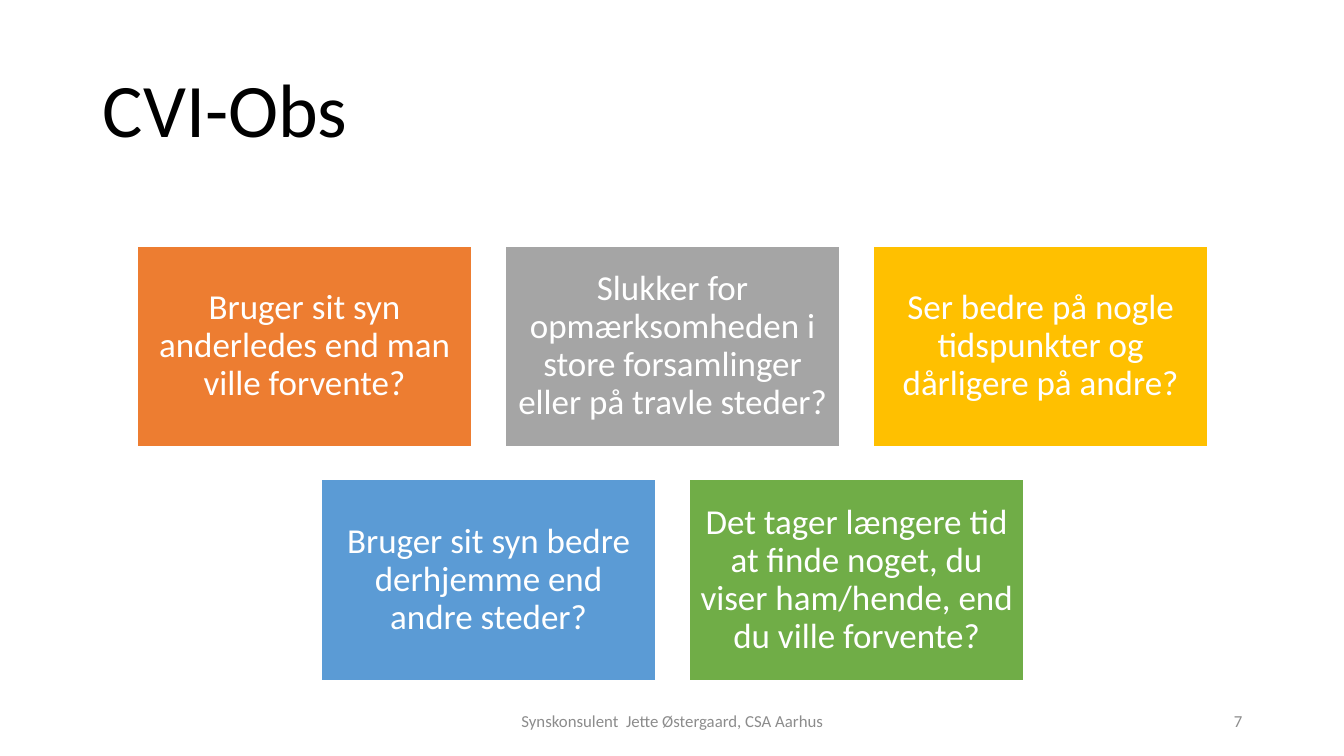
from pptx import Presentation
from pptx.dml.color import RGBColor
from pptx.enum import shapes, text
from pptx.util import Inches, Pt

WHITE = RGBColor(0xFF, 0xFF, 0xFF)
BLACK = RGBColor(0x00, 0x00, 0x00)
GREY_TEXT = RGBColor(0x8C, 0x8C, 0x8C)
ORANGE = RGBColor(0xED, 0x7D, 0x31)
GREY = RGBColor(0xA5, 0xA5, 0xA5)
YELLOW = RGBColor(0xFF, 0xC0, 0x00)
BLUE = RGBColor(0x5B, 0x9B, 0xD5)
GREEN = RGBColor(0x70, 0xAD, 0x47)
LEFT, CENTER, RIGHT = text.PP_ALIGN.LEFT, text.PP_ALIGN.CENTER, text.PP_ALIGN.RIGHT

TITLE = "CVI-Obs"
QUESTION_ROWS = [
    [("Bruger sit syn anderledes end man ville forvente?", ORANGE),
     ("Slukker for opmærksomheden i store forsamlinger eller på travle steder?", GREY),
     ("Ser bedre på nogle tidspunkter og dårligere på andre?", YELLOW)],
    [("Bruger sit syn bedre derhjemme end andre steder?", BLUE),
     ("Det tager længere tid at finde noget, du viser ham/hende, end du ville forvente?", GREEN)],
]
# text, left, width, alignment
FOOTERS = [
    ("Synskonsulent  Jette Østergaard, CSA Aarhus", 4.42, 4.5, CENTER),
    ("7", 9.42, 3, RIGHT),
]

BOX_WIDTH, BOX_HEIGHT, GAP = 3.32, 1.99, 0.33
GRID_CENTER, GRID_TOP = 6.67, 2.44


def write(box, words, size, color, align, spacing=1.0):
    frame = box.text_frame
    frame.word_wrap = True
    frame.auto_size = text.MSO_AUTO_SIZE.NONE
    frame.vertical_anchor = text.MSO_ANCHOR.MIDDLE
    para = frame.paragraphs[0]
    para.text = words
    para.alignment = align
    para.line_spacing = spacing
    para.font.name = "Calibri"
    para.font.size = Pt(size)
    para.font.color.rgb = color


def add_question(slide, words, fill, left, top):
    box = slide.shapes.add_shape(
        shapes.MSO_SHAPE.RECTANGLE,
        Inches(left), Inches(top), Inches(BOX_WIDTH), Inches(BOX_HEIGHT))
    box.shadow.inherit = False
    box.fill.solid()
    box.fill.fore_color.rgb = fill
    box.line.color.rgb = WHITE
    box.line.width = Pt(1)
    frame = box.text_frame
    frame.margin_left = frame.margin_right = Inches(0.1)
    frame.margin_top = frame.margin_bottom = Inches(0.1)
    write(box, words, 25, WHITE, CENTER, 0.9)


def main():
    deck = Presentation()
    deck.slide_width, deck.slide_height = Inches(13.33), Inches(7.5)
    slide = deck.slides.add_slide(deck.slide_layouts[5])

    title = slide.shapes.title
    title.left, title.top = Inches(0.92), Inches(0.4)
    title.width, title.height = Inches(11.5), Inches(1.45)
    write(title, TITLE, 54, BLACK, LEFT, 0.9)

    for row, questions in enumerate(QUESTION_ROWS):
        row_width = len(questions) * (BOX_WIDTH + GAP) - GAP
        row_left = GRID_CENTER - row_width / 2
        top = GRID_TOP + row * (BOX_HEIGHT + GAP)
        for column, (words, fill) in enumerate(questions):
            add_question(slide, words, fill, row_left + column * (BOX_WIDTH + GAP), top)

    for words, left, width, align in FOOTERS:
        box = slide.shapes.add_textbox(Inches(left), Inches(6.95), Inches(width), Inches(0.4))
        write(box, words, 12, GREY_TEXT, align)

    deck.save("out.pptx")


if __name__ == "__main__":
    main()
